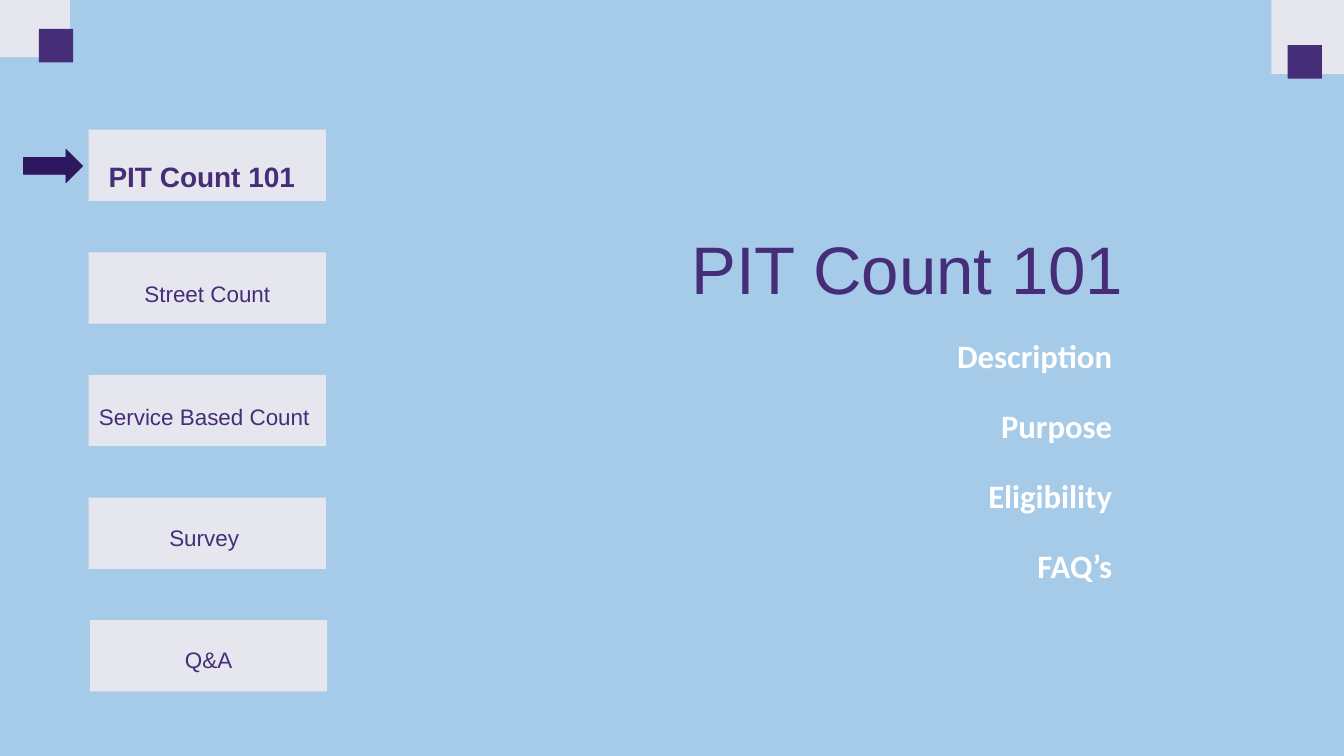
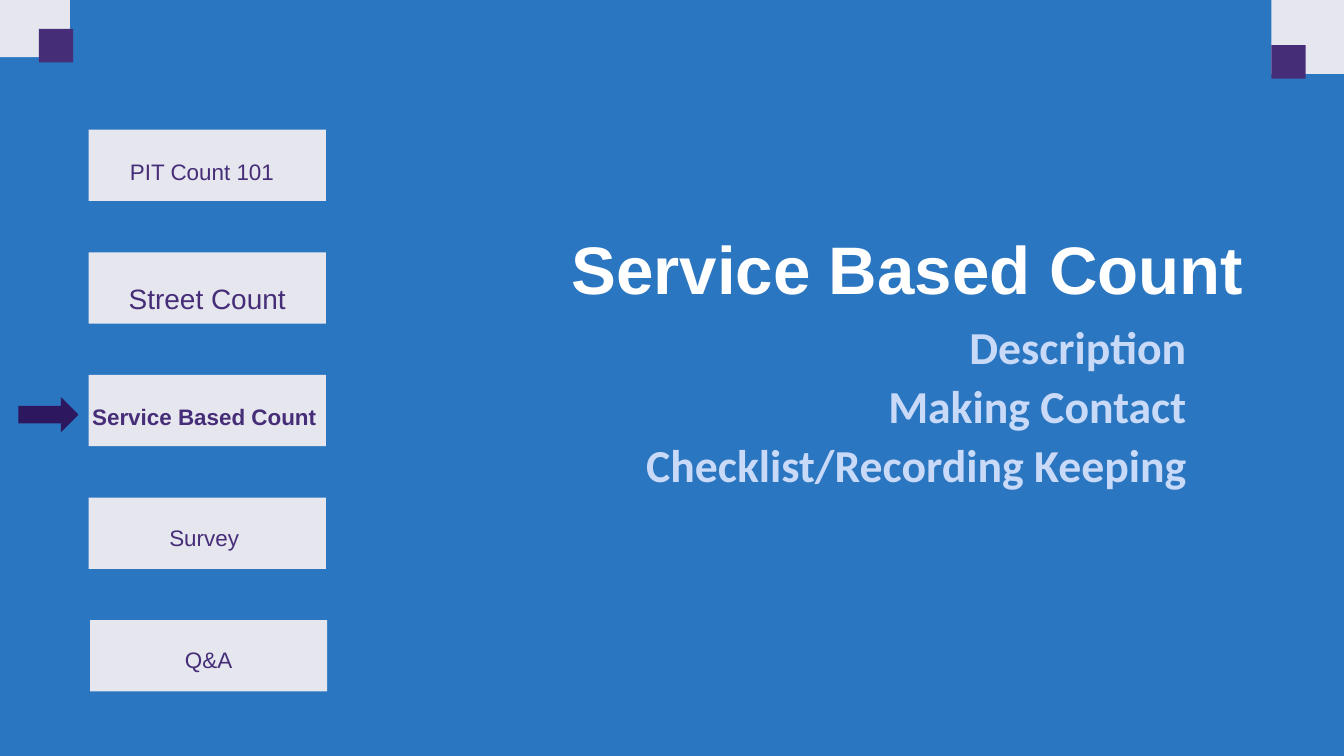
from pptx import Presentation
from pptx.dml.color import RGBColor
from pptx.enum import shapes, text
from pptx.util import Inches, Pt

PALE_BLUE = RGBColor(0xA5, 0xCB, 0xE9)
BLUE = RGBColor(0x2B, 0x76, 0xC0)
MIST = RGBColor(0xE5, 0xE6, 0xEE)
PURPLE = RGBColor(0x46, 0x2D, 0x78)
DARK_PURPLE = RGBColor(0x2D, 0x17, 0x5F)
LIGHT_BLUE = RGBColor(0xC9, 0xDA, 0xF8)
WHITE = RGBColor(0xFF, 0xFF, 0xFF)

HEADING_FONT, BODY_FONT = "Arial", "Calibri"
MENU_TOP, MENU_PITCH = 1.93, 1.825
BUTTON_WIDTH, BUTTON_HEIGHT = 3.53, 1.06
# Each section: label, button left, label offset from the button
SECTIONS = [
    ("PIT Count 101", 1.32, (-0.08, 0.34)),
    ("Street Count", 1.32, (0, 0.34)),
    ("Service Based Count ", 1.32, (0, 0.34)),
    ("Survey ", 1.32, (0, 0.31)),
    ("Q&A", 1.34, (0, 0.3)),
]


def add_block(slide, box, color, kind=shapes.MSO_SHAPE.RECTANGLE):
    """Draw a flat, filled shape in the given box."""
    block = slide.shapes.add_shape(kind, *map(Inches, box))
    block.shadow.inherit = False
    block.fill.solid()
    block.fill.fore_color.rgb = color
    block.line.fill.background()
    return block


def add_lines(slide, box, lines, size, color, font=HEADING_FONT, bold=False,
              align=text.PP_ALIGN.CENTER, spacing=1.2, gap=0, insets=(0, 0)):
    """Write one paragraph per line, with a gap in points between them."""
    frame = slide.shapes.add_textbox(*map(Inches, box)).text_frame
    frame.word_wrap = True
    frame.margin_left = frame.margin_right = Inches(insets[0])
    frame.margin_top = frame.margin_bottom = Inches(insets[1])
    for index, line in enumerate(lines):
        paragraph = frame.add_paragraph() if index else frame.paragraphs[0]
        paragraph.alignment = align
        paragraph.line_spacing = spacing
        if index and gap:
            paragraph.space_before = Pt(gap)
        run = paragraph.add_run()
        run.text = line
        run.font.name = font
        run.font.size = Pt(size)
        run.font.bold = bold
        run.font.color.rgb = color


def add_corner(slide, left, top, accent_left, accent_top):
    """Draw a pale corner block with a small purple block over it."""
    add_block(slide, (left, top, 1.13, 1.1), MIST)
    add_block(slide, (left + accent_left, top + accent_top, 0.51, 0.5), PURPLE)


def add_menu(slide, active, large, arrow_left, arrow_drop):
    """Stack the section buttons and point an arrow at the active one."""
    for index, (label, left, (shift, drop)) in enumerate(SECTIONS):
        top = MENU_TOP + index * MENU_PITCH
        add_block(slide, (left, top, BUTTON_WIDTH, BUTTON_HEIGHT), MIST)
        add_lines(slide, (left + shift, top + drop, BUTTON_WIDTH, 0.48), [label],
                  30 if index == large else 24, PURPLE, bold=index == active)
    arrow_top = MENU_TOP + active * MENU_PITCH + arrow_drop
    arrow = add_block(slide, (arrow_left, arrow_top, 0.88, 0.5), DARK_PURPLE,
                      shapes.MSO_SHAPE.RIGHT_ARROW)
    arrow.line.color.rgb = DARK_PURPLE
    arrow.line.width = Pt(0.75)


def add_section_slide(deck, background, accent_left, menu, title, title_color,
                      title_bold, topics_box, topics, topic_size, topic_color, topic_gap):
    """Build a section opener with menu, title and right-aligned topics."""
    slide = deck.slides.add_slide(deck.slide_layouts[6])
    slide.background.fill.solid()
    slide.background.fill.fore_color.rgb = background
    add_corner(slide, -0.09, -0.25, 0.67, 0.68)
    add_corner(slide, 18.92, 0, accent_left, 0.67)
    add_menu(slide, **menu)
    add_lines(slide, (7.51, 3.14, 11.99, 1.45), [title], 72, title_color, bold=title_bold)
    add_lines(slide, topics_box, topics, topic_size, topic_color, BODY_FONT, True,
              text.PP_ALIGN.RIGHT, 0.9, topic_gap, (0.1, 0.05))


def main():
    """Build and save the two section openers."""
    deck = Presentation()
    deck.slide_width, deck.slide_height = Inches(20), Inches(11.25)
    add_section_slide(
        deck, PALE_BLUE, 0.24,
        dict(active=0, large=0, arrow_left=0.35, arrow_drop=0.29),
        "PIT Count 101", PURPLE, False, (8.97, 5.02, 7.68, 4.97),
        ["Description", "Purpose", "Eligibility", "FAQ’s"], 35, WHITE, 37)
    add_section_slide(
        deck, BLUE, 0,
        dict(active=2, large=1, arrow_left=0.28, arrow_drop=0.34),
        "Service Based Count", WHITE, True, (8.11, 4.79, 9.64, 4.97),
        ["Description", "Making Contact", "Checklist/Recording Keeping"],
        49, LIGHT_BLUE, 10)
    deck.save("out.pptx")


if __name__ == "__main__":
    main()
